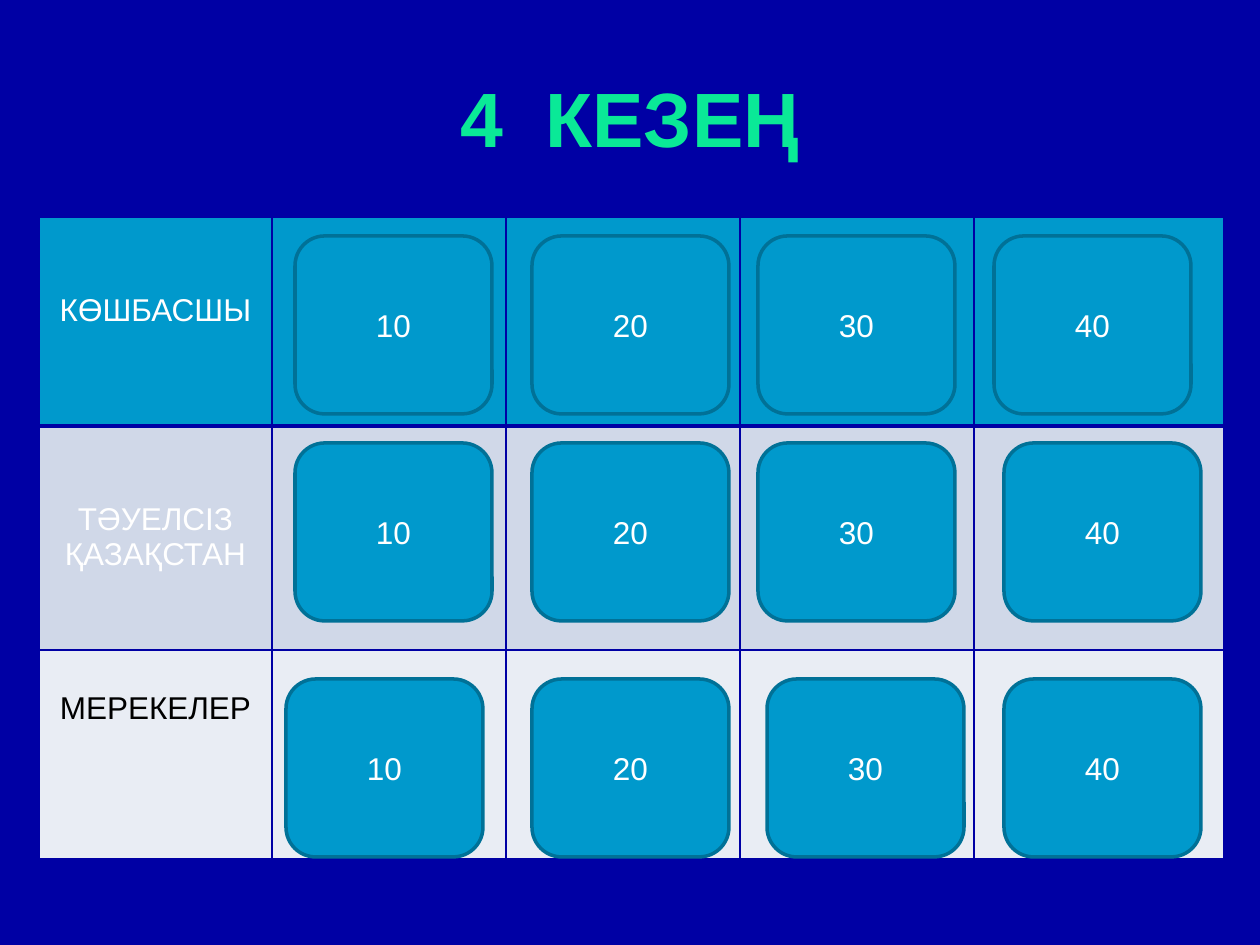
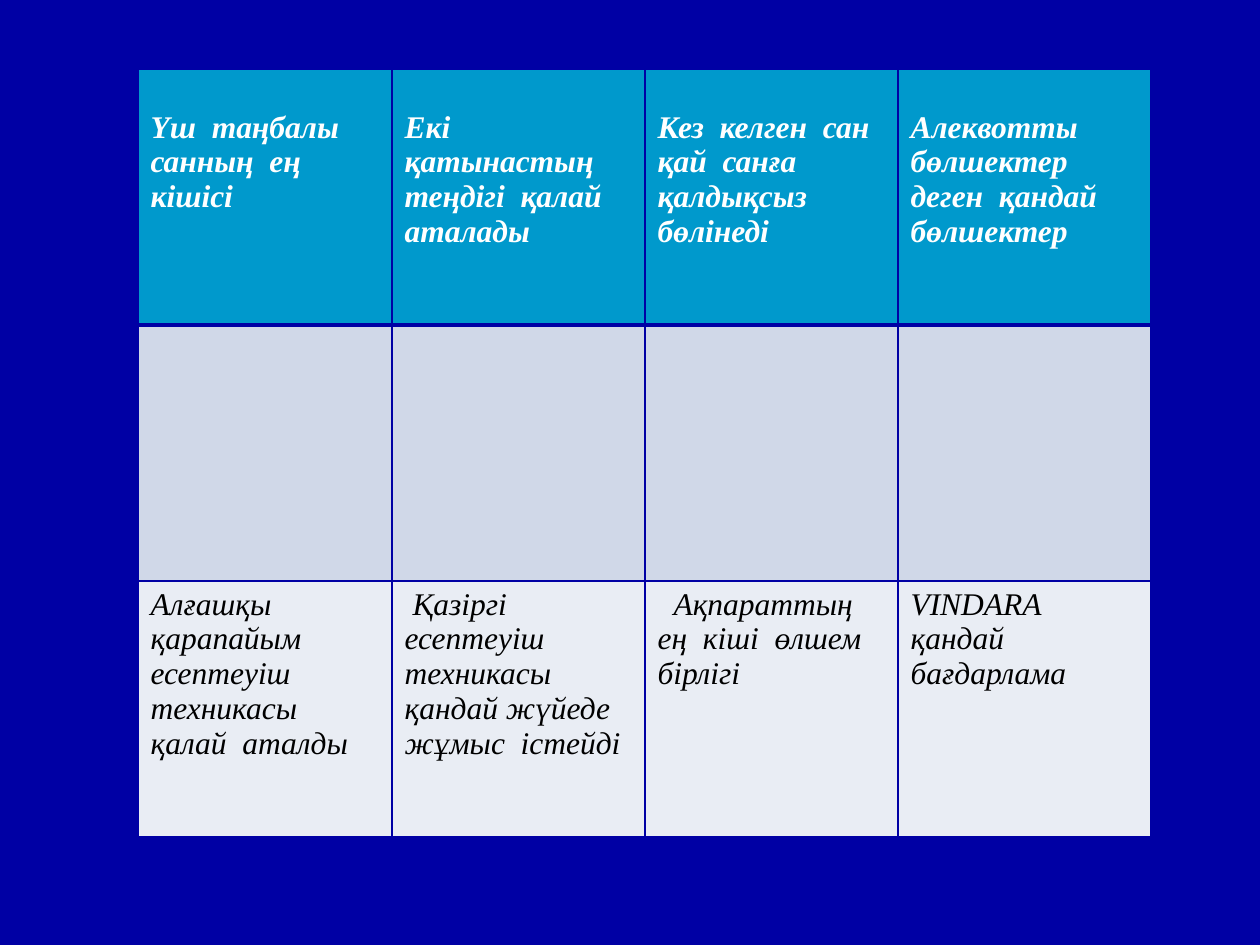
from lxml import etree
from pptx import Presentation
from pptx.dml.color import RGBColor
from pptx.enum.shapes import MSO_SHAPE
from pptx.enum.text import MSO_ANCHOR, PP_ALIGN
from pptx.oxml.ns import qn
from pptx.util import Emu, Pt

ROUNDED = MSO_SHAPE.ROUNDED_RECTANGLE
MIDDLE = MSO_ANCHOR.MIDDLE
LEFT, CENTER = PP_ALIGN.LEFT, PP_ALIGN.CENTER

NAVY = RGBColor(0x00, 0x00, 0xA4)
CYAN = RGBColor(0x00, 0x99, 0xCC)
TEAL = RGBColor(0x00, 0x71, 0x97)
MINT = RGBColor(0x0A, 0xE9, 0x97)
BAND_DARK = RGBColor(0xD0, 0xD8, 0xE8)
BAND_LIGHT = RGBColor(0xE9, 0xED, 0xF4)
WHITE = RGBColor(0xFF, 0xFF, 0xFF)
BLACK = RGBColor(0x00, 0x00, 0x00)

SANS, SERIF = "Arial", "Times New Roman"
ROW_FILLS = [CYAN, BAND_DARK, BAND_LIGHT]
ROW_INKS = [WHITE, WHITE, BLACK]
BODY_SIZE = 18
CELL_INSET = 6
LINE_HEIGHT = 35
THIN, THICK = 1, 3

TITLE_BOX = (63, 38, 1134, 158)
TOPIC_ORIGIN = (39, 217)
TOPIC_COLUMNS = [233, 234, 234, 234, 250]
TOPIC_ROWS = [209, 224, 209]
# Each topic: its name and how many lines below the top of the cell it starts.
TOPICS = [("КӨШБАСШЫ", 2), ("ТӘУЕЛСІЗ ҚАЗАҚСТАН", 2), ("МЕРЕКЕЛЕР", 1)]
BUTTON_SIZE = (197, 178)
BUTTON_TOPS = [19, 226, 462]
BUTTON_LEFTS = [
    [256, 493, 719, 955],
    [256, 493, 719, 965],
    [247, 493, 728, 965],
]

QUESTION_ORIGIN = (138, 69)
QUESTION_COLUMNS = [254, 253, 253, 253]
QUESTION_ROWS = [256] * 3
MATH_QUESTIONS = [
    "Үш  таңбалы санның  ең кішісі",
    "Екі қатынастың теңдігі  қалай аталады",
    "Кез  келген  сан қай  санға қалдықсыз бөлінеді",
    "Алеквотты бөлшектер деген  қандай бөлшектер",
]
# Each question with its first-line indent.
COMPUTER_QUESTIONS = [
    ("Алғашқы қарапайым есептеуіш техникасы қалай  аталды", 0),
    ("Қазіргі есептеуіш техникасы қандай жүйеде жұмыс  істейді", 8),
    ("Ақпараттың ең  кіші  өлшем бірлігі", 16),
    ("VINDARA қандай бағдарлама", 0),
]


def px(length):
    return Emu(round(length * 914400 / 126))


def style_font(para, name, size, color, bold=False, italic=False):
    font = para.font
    font.name, font.size = name, Pt(size)
    font.bold, font.italic = bold, italic
    font.color.rgb = color


def add_page(deck):
    page = deck.slides.add_slide(deck.slide_layouts[6])
    fill = page.background.fill
    fill.solid()
    fill.fore_color.rgb = NAVY
    return page


def add_title(page, box, text):
    frame = page.shapes.add_textbox(*map(px, box)).text_frame
    frame.word_wrap = True
    frame.vertical_anchor = MIDDLE
    para = frame.paragraphs[0]
    para.text = text
    para.alignment = CENTER
    style_font(para, SANS, 44, MINT, bold=True)


def set_borders(cell, top, bottom):
    """Draw the cell's sides in the page colour, with the given widths in points."""
    props = cell._tc.get_or_add_tcPr()
    widths = {"a:lnL": THIN, "a:lnR": THIN, "a:lnT": top, "a:lnB": bottom}
    for tag, width in widths.items():
        line = etree.SubElement(props, qn(tag), w=str(Pt(width)))
        fill = etree.SubElement(line, qn("a:solidFill"))
        etree.SubElement(fill, qn("a:srgbClr"), val=str(NAVY))


def add_grid(page, origin, columns, rows):
    """Add an empty table with a header row and two tinted rows."""
    box = (*origin, sum(columns), sum(rows))
    table = page.shapes.add_table(len(rows), len(columns), *map(px, box)).table
    table.first_row = table.horz_banding = False
    for column, width in zip(table.columns, columns):
        column.width = px(width)
    for index, height in enumerate(rows):
        table.rows[index].height = px(height)
        for cell in table.rows[index].cells:
            set_borders(cell,
                        THICK if index == 1 else THIN,
                        THICK if index == 0 else THIN)
            cell.fill.solid()
            cell.fill.fore_color.rgb = ROW_FILLS[index]
    return table


def write_cell(cell, text, font_name, color, lines_down=0, align=LEFT,
               indent=0, bold=False, italic=False):
    cell.margin_top = px(CELL_INSET + lines_down * LINE_HEIGHT)
    para = cell.text_frame.paragraphs[0]
    para.text = text
    para.alignment = align
    if indent:
        para._p.get_or_add_pPr().set("indent", str(px(indent)))
    style_font(para, font_name, BODY_SIZE, color, bold, italic)


def add_button(page, left, top, points):
    button = page.shapes.add_shape(
        ROUNDED, *map(px, (left, top, *BUTTON_SIZE)))
    button.shadow.inherit = False
    button.fill.solid()
    button.fill.fore_color.rgb = CYAN
    button.line.color.rgb = TEAL
    button.line.width = Pt(2)
    frame = button.text_frame
    frame.vertical_anchor = MIDDLE
    para = frame.paragraphs[0]
    para.text = str(points)
    para.alignment = CENTER
    style_font(para, SANS, BODY_SIZE, WHITE)


def add_topic_board(page, origin):
    table = add_grid(page, origin, TOPIC_COLUMNS, TOPIC_ROWS)
    left, top = origin
    for row, (topic, lines_down) in enumerate(TOPICS):
        write_cell(table.cell(row, 0), topic, SANS, ROW_INKS[row],
                   lines_down, CENTER)
        for number, offset in enumerate(BUTTON_LEFTS[row], start=1):
            add_button(page, left + offset, top + BUTTON_TOPS[row], 10 * number)


def add_question_board(page, origin):
    table = add_grid(page, origin, QUESTION_COLUMNS, QUESTION_ROWS)
    for column, text in enumerate(MATH_QUESTIONS):
        write_cell(table.cell(0, column), text, SERIF, ROW_INKS[0],
                   lines_down=1, bold=True, italic=True)
    for column, (text, indent) in enumerate(COMPUTER_QUESTIONS):
        write_cell(table.cell(2, column), text, SERIF, ROW_INKS[2],
                   indent=indent, italic=True)


def main():
    deck = Presentation()
    deck.slide_width, deck.slide_height = px(1260), px(945)

    topics_page = add_page(deck)
    add_title(topics_page, TITLE_BOX, "4  КЕЗЕҢ")
    add_topic_board(topics_page, TOPIC_ORIGIN)

    add_question_board(add_page(deck), QUESTION_ORIGIN)

    deck.save("out.pptx")


if __name__ == "__main__":
    main()
